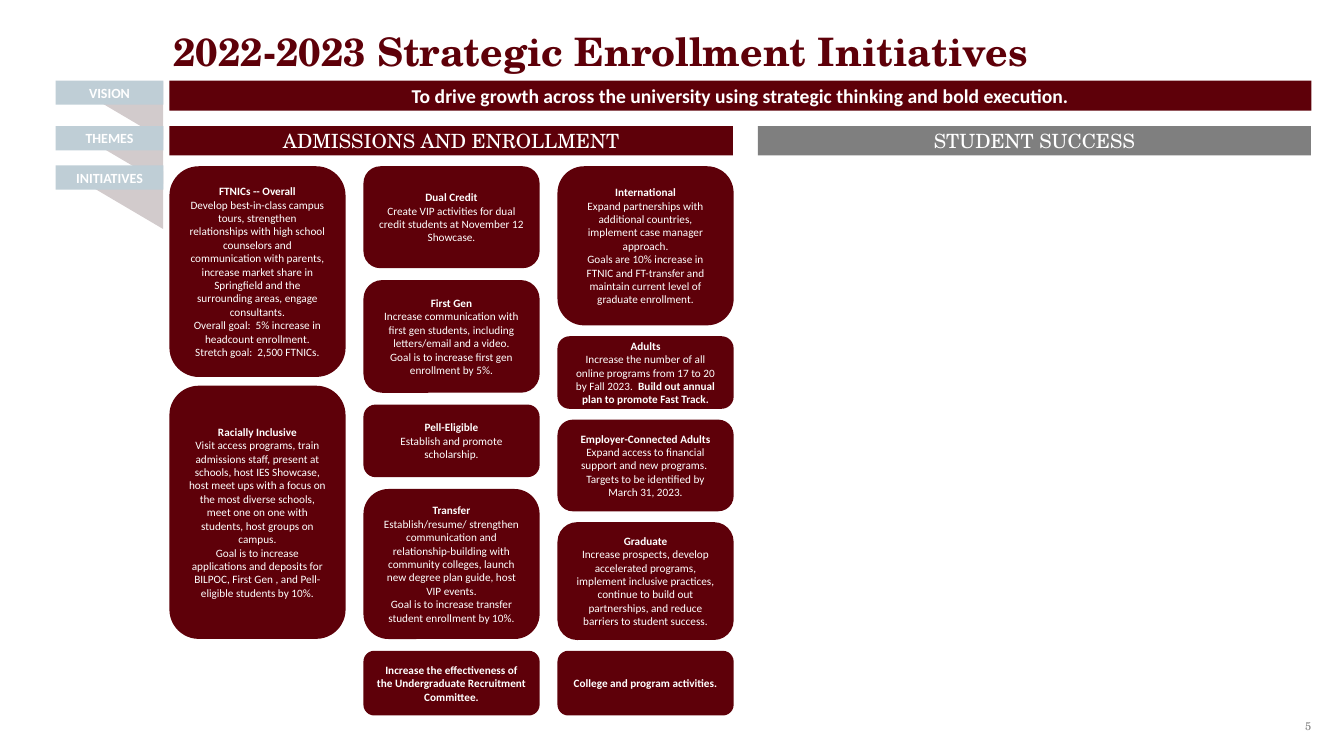
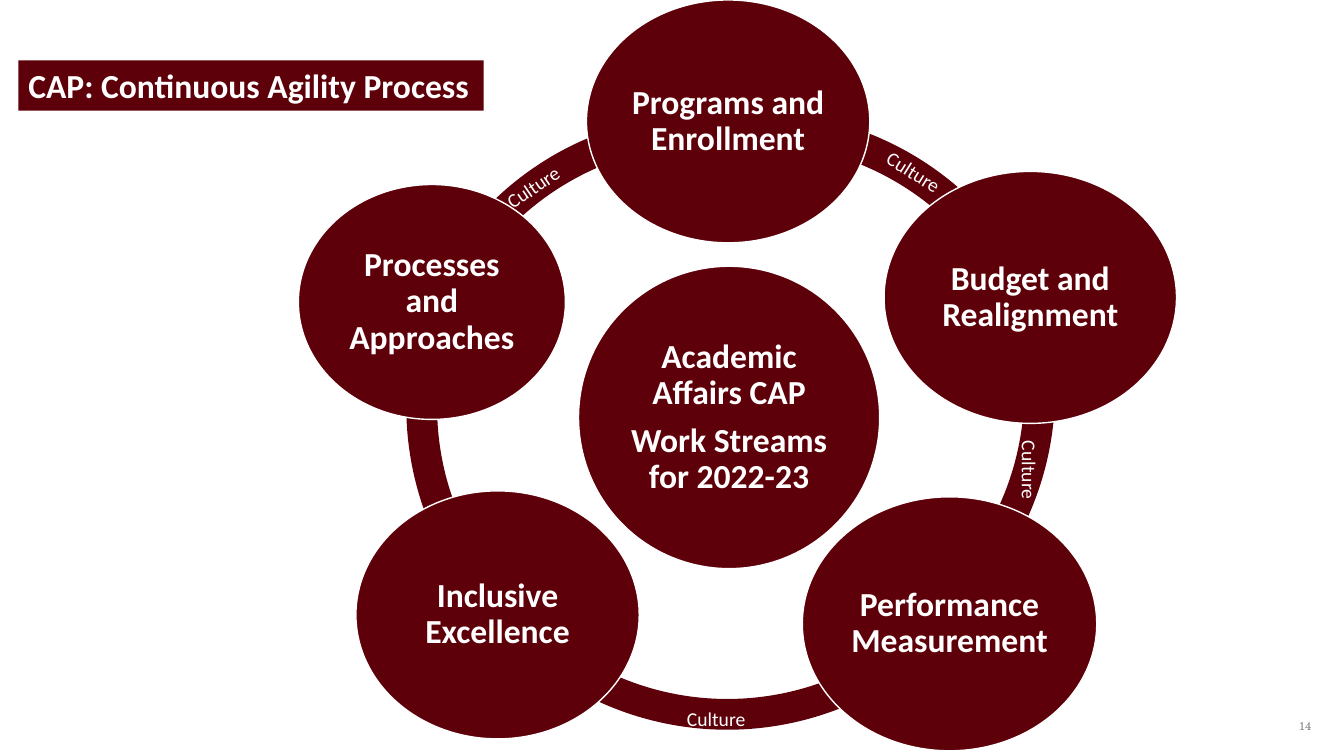
import pptx
import pptx.util
import pptx.dml.color
import pptx.enum.shapes
import pptx.enum.text

Cm, Pt = pptx.util.Cm, pptx.util.Pt
SHAPE = pptx.enum.shapes.MSO_SHAPE
ALIGN = pptx.enum.text.PP_ALIGN
ANCHOR = pptx.enum.text.MSO_ANCHOR

COLORS = {"maroon": "5E0009", "grey": "7F7F7F", "number": "808080",
          "tag": "BFCED6", "wedge": "D2CBCC", "white": "FFFFFF"}
SANS, SERIF = "Calibri", "TeX Gyre Schola"


def write(shape, lines, size, font=SANS, color="white", bold=False,
          align=ALIGN.CENTER, anchor=ANCHOR.MIDDLE):
    """Fill a shape with paragraphs; text after a | takes the opposite weight."""
    frame = shape.text_frame
    frame.word_wrap = True
    frame.auto_size = pptx.enum.text.MSO_AUTO_SIZE.NONE
    frame.vertical_anchor = anchor
    for index, line in enumerate(lines):
        paragraph = frame.paragraphs[0] if index == 0 else frame.add_paragraph()
        paragraph.alignment = align
        for part, words in enumerate(line.split("|")):
            run = paragraph.add_run()
            run.text = words
            run.font.name, run.font.size = font, Pt(size)
            run.font.bold = bold != (part % 2 == 1)
            run.font.color.rgb = pptx.dml.color.RGBColor.from_string(COLORS[color])


def add_shape(slide, preset, box, fill, line=None, width=0.75):
    shape = slide.shapes.add_shape(preset, *[Cm(v) for v in box])
    shape.shadow.inherit = False
    shape.fill.solid()
    shape.fill.fore_color.rgb = pptx.dml.color.RGBColor.from_string(COLORS[fill])
    if line:
        shape.line.color.rgb = pptx.dml.color.RGBColor.from_string(COLORS[line])
        shape.line.width = Pt(width)
    else:
        shape.line.fill.background()
    return shape


prs = pptx.Presentation()
prs.slide_width, prs.slide_height = Cm(33.87), Cm(19.05)

# Shared parts: title placement and slide number
slides = []
for title_text, title_box, size, font, color, number in [
    ("2022-2023 Strategic Enrollment Initiatives", (4.11, 0.56, 22.5, 1.45),
     28, SERIF, "maroon", "5"),
    ("CAP: Continuous Agility Process", (0.46, 1.52, 11.73, 1.27),
     24, SANS, "white", "14"),
]:
    slide = prs.slides.add_slide(prs.slide_layouts[5])
    title = slide.shapes.title
    title.left, title.top, title.width, title.height = [Cm(v) for v in title_box]
    write(title, [title_text], size, font, color, True, ALIGN.LEFT, ANCHOR.TOP)
    page = slide.shapes.add_textbox(Cm(32.44), Cm(18.03), Cm(0.86), Cm(0.51))
    write(page, [number], 8, SERIF, "number", align=ALIGN.RIGHT)
    slides.append(slide)
initiatives, agility = slides

# Slide 1: level tags with wedges behind them
for top in (2.06, 3.18, 4.32):
    wedge = add_shape(initiatives, SHAPE.RIGHT_TRIANGLE, (1.65, top, 2.46, 1.45), "wedge")
    wedge.rotation = 180
for level, top in [("VISION", 2.03), ("THEMES", 3.18), ("INITIATIVES", 4.17)]:
    tag = add_shape(initiatives, SHAPE.RECTANGLE, (1.4, top, 2.72, 0.61), "tag")
    write(tag, [level], 10, bold=True)

# Slide 1: vision and theme bands
for words, box, fill, font in [
    ("To drive growth across the university using strategic thinking and bold execution.",
     (4.27, 2.03, 28.78, 0.76), "maroon", SANS),
    ("ADMISSIONS AND ENROLLMENT", (4.27, 3.18, 14.2, 0.74), "maroon", SERIF),
    ("STUDENT SUCCESS", (19.1, 3.18, 13.94, 0.74), "grey", SERIF),
]:
    band = add_shape(initiatives, SHAPE.RECTANGLE, box, fill)
    write(band, [words], 14, font, bold=font == SANS)

# Slide 1: initiative cards, each column spread evenly down to its bottom
CARD_LEFT, CARD_TOP, CARD_WIDTH, CARD_PITCH = 4.27, 4.19, 4.44, 4.89
columns = [
    (16.1, [
        (5.31, ["FTNICs -- Overall",
                "Develop best-in-class campus tours, strengthen relationships with high school "
                "counselors and communication with parents, increase market share in "
                "Springfield and the surrounding areas, engage consultants.",
                "Overall goal:  5% increase in headcount enrollment.",
                "Stretch goal:  2,500 FTNICs."]),
        (6.38, ["Racially Inclusive",
                "Visit access programs, train admissions staff, present at schools, host IES "
                "Showcase, host meet ups with a focus on the most diverse schools, meet one on "
                "one with students, host groups on campus.",
                "Goal is to increase applications and deposits for BILPOC, First Gen , and "
                "Pell-eligible students by 10%."]),
    ]),
    (18.03, [
        (2.57, ["Dual Credit",
                "Create VIP activities for dual credit students at November 12 Showcase."]),
        (2.84, ["First Gen",
                "Increase communication with first gen students, including letters/email and "
                "a video.",
                "Goal is to increase first gen enrollment by 5%."]),
        (1.83, ["Pell-Eligible", "Establish and promote scholarship."]),
        (3.78, ["Transfer",
                "Establish/resume/ strengthen communication and relationship-building with "
                "community colleges, launch new degree plan guide, host VIP events.",
                "Goal is to increase transfer student enrollment by 10%."]),
        (1.63, ["Increase the effectiveness of the Undergraduate Recruitment Committee."]),
    ]),
    (18.03, [
        (4.01, ["International",
                "Expand partnerships with additional countries, implement case manager approach.",
                "Goals are 10% increase in FTNIC and FT-transfer and maintain current level of "
                "graduate enrollment."]),
        (1.83, ["Adults",
                "Increase the number of all online programs from 17 to 20 by Fall 2023.  "
                "|Build out annual plan to promote Fast Track."]),
        (2.31, ["Employer-Connected Adults",
                "Expand access to financial support and new programs.  Targets to be "
                "identified by March 31, 2023."]),
        (2.97, ["Graduate",
                "Increase prospects, develop accelerated programs, implement inclusive "
                "practices, continue to build out partnerships, and reduce barriers to "
                "student success."]),
        (1.63, ["College and program activities."]),
    ]),
]
for column, (bottom, cards) in enumerate(columns):
    heights = [height for height, lines in cards]
    gap = (bottom - CARD_TOP - sum(heights)) / (len(cards) - 1)
    top = CARD_TOP
    for height, lines in cards:
        card = add_shape(initiatives, SHAPE.ROUNDED_RECTANGLE,
                         (CARD_LEFT + column * CARD_PITCH, top, CARD_WIDTH, height), "maroon")
        write(card, lines, 8)
        for run in card.text_frame.paragraphs[0].runs:
            run.font.bold = True
        top += height + gap

# Slide 2: title bar
bar = agility.shapes.title
bar.fill.solid()
bar.fill.fore_color.rgb = pptx.dml.color.RGBColor.from_string(COLORS["maroon"])

# Slide 2: culture ring, angles in degrees
RING = 15.52
for left, top, start, end, line in [
    (10.08, 2.87, 203.48, 273.95, None),
    (10.24, 2.49, 136.07, 200.36, None),
    (10.57, 2.87, 42.38, 140.02, None),
    (11.07, 2.08, 339.83, 47.89, None),
    (11.3, 2.84, 264.71, 335.79, "maroon"),
]:
    arc = add_shape(agility, SHAPE.BLOCK_ARC, (left, top, RING, RING), "maroon", line)
    # Angles are stored in 1/60000 degree, adjustments count in 1/100000
    arc.adjustments[0] = start * 0.6
    arc.adjustments[1] = end * 0.6
    arc.adjustments[2] = 0.05

# Slide 2: work streams around the centre
for lines, box in [
    (["Academic Affairs CAP", "Work Streams for 2022-23"], (14.58, 6.71, 7.59, 7.62)),
    (["Programs and Enrollment"], (14.78, 0, 7.14, 6.12)),
    (["Budget and Realignment"], (22.28, 4.32, 7.37, 6.35)),
    (["Performance Measurement"], (20.22, 12.52, 7.42, 6.4)),
    (["Inclusive Excellence"], (8.97, 12.37, 7.14, 6.25)),
    (["Processes and Approaches"], (7.52, 4.65, 6.73, 5.92)),
]:
    stream = add_shape(agility, SHAPE.OVAL, box, "maroon", "white", 1)
    write(stream, lines, 24, bold=True)
    frame = stream.text_frame
    frame.margin_left = frame.margin_right = Cm(0.08)
    frame.margin_top = frame.margin_bottom = Cm(0.08)
    for paragraph in frame.paragraphs:
        paragraph.line_spacing = 0.9
        paragraph.space_after = Pt(8.4)

# Slide 2: ring labels, placed by their centres
LABEL_WIDTH, LABEL_HEIGHT = 2.6, 0.86
for center_x, center_y, angle, word in [
    (18.05, 18.1, 0, "Culture"),
    (25.95, 11.85, 90, "Culture"),
    (23.03, 4.33, 32, "Culture"),
    (13.43, 4.71, -34, "Culture"),
]:
    label = agility.shapes.add_textbox(Cm(center_x - LABEL_WIDTH / 2),
                                       Cm(center_y - LABEL_HEIGHT / 2),
                                       Cm(LABEL_WIDTH), Cm(LABEL_HEIGHT))
    label.rotation = angle
    write(label, [word], 14)

prs.save("out.pptx")
